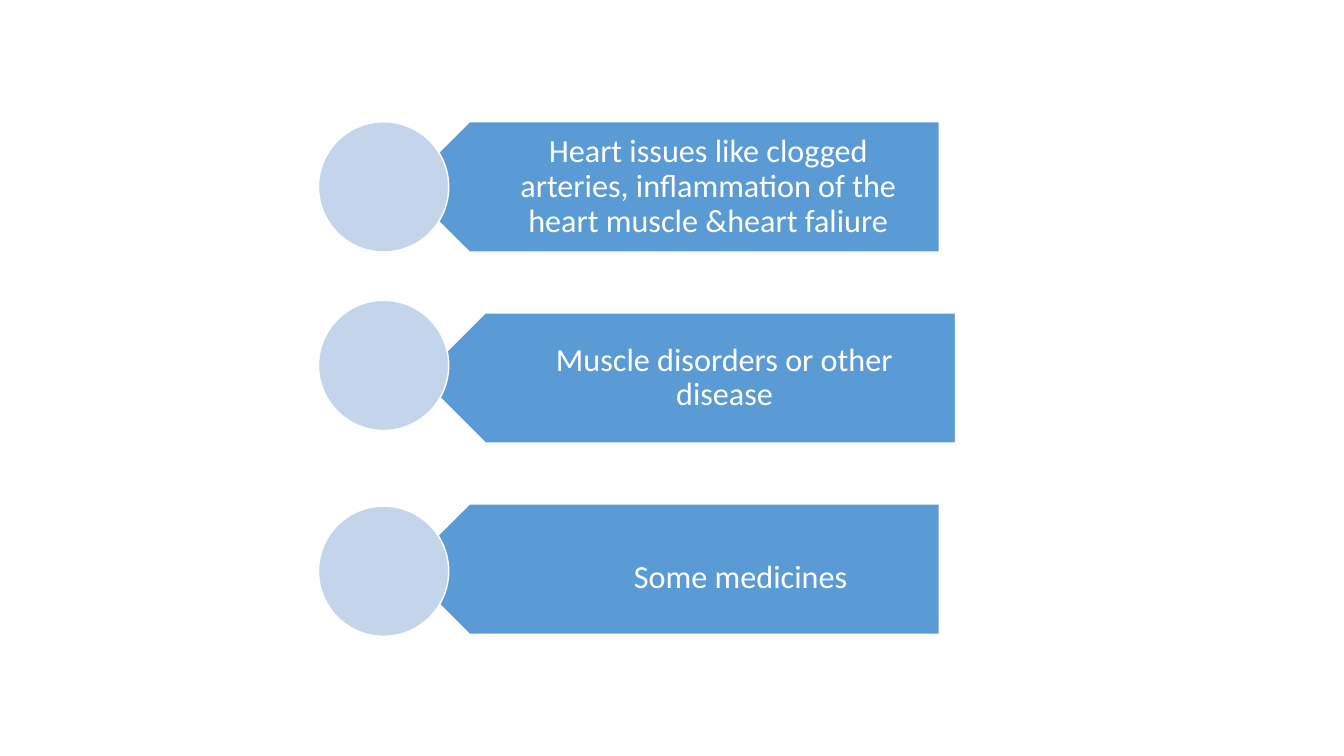
import pptx
import pptx.dml.color
import pptx.enum.shapes
import pptx.enum.text
import pptx.util

Pt = pptx.util.Pt
SHAPE = pptx.enum.shapes.MSO_SHAPE


def colour(code):
    return pptx.dml.color.RGBColor.from_string(code)


def apply_format(target, values):
    for name, value in values.items():
        setattr(target, name, value)


class CauseSlide:
    ARROW, DISC, WHITE = "5B9BD5", "C4D5EB", "FFFFFF"
    HEIGHT, ARROW_WIDTH, LABEL_WIDTH = 93, 382.3, 359.3
    FRAME = {
        "word_wrap": True,
        "vertical_anchor": pptx.enum.text.MSO_ANCHOR.MIDDLE,
        "margin_left": Pt(41),
        "margin_right": Pt(13),
        "margin_top": Pt(7),
        "margin_bottom": Pt(7),
    }
    PARAGRAPH = {
        "alignment": pptx.enum.text.PP_ALIGN.CENTER,
        "line_spacing": 0.9,
        "space_after": Pt(8),
    }
    FONT = {"name": "Calibri", "size": Pt(23)}

    def __init__(self, deck):
        self.page = deck.slides.add_slide(deck.slide_layouts[6])

    def shape(self, shapes, kind, left, top, width, fill):
        shape = shapes.add_shape(kind, Pt(left), Pt(top), Pt(width), Pt(self.HEIGHT))
        shape.shadow.inherit = False
        shape.fill.solid()
        shape.fill.fore_color.rgb = colour(fill)
        shape.line.color.rgb = colour(self.WHITE)
        shape.line.width = Pt(1)
        return shape

    def label(self, shapes, text, left, top):
        box = shapes.add_textbox(Pt(left), Pt(top), Pt(self.LABEL_WIDTH), Pt(self.HEIGHT))
        apply_format(box.text_frame, self.FRAME)
        para = box.text_frame.paragraphs[0]
        apply_format(para, self.PARAGRAPH)
        span = para.add_run()
        span.text = text
        apply_format(span.font, self.FONT)
        span.font.color.rgb = colour(self.WHITE)

    def arrow(self, text, arrow_at, label_at):
        """Add a left-pointing arrow grouped with its label."""
        group = self.page.shapes.add_group_shape()
        arrow = self.shape(group.shapes, SHAPE.PENTAGON, *arrow_at, self.ARROW_WIDTH, self.ARROW)
        arrow.rotation = 180
        self.label(group.shapes, text, *label_at)

    def disc(self, top):
        self.shape(self.page.shapes, SHAPE.OVAL, 227.5, top, self.HEIGHT, self.DISC)


def main():
    deck = pptx.Presentation()
    deck.slide_width, deck.slide_height = Pt(960), Pt(540)
    slide = CauseSlide(deck)
    causes = [
        ("Heart issues like clogged arteries, inflammation of the heart muscle &heart faliure",
         (288.7, 87), (312.5, 87), 87),
        ("Muscle disorders or other disease", (300.2, 223.5), (324, 223.5), 214.5),
        ("Some medicines", (288.7, 360), (335.5, 366.5), 361.5),
    ]
    for text, arrow_at, label_at, disc_top in causes:
        slide.arrow(text, arrow_at, label_at)
        slide.disc(disc_top)
    deck.save("out.pptx")


if __name__ == "__main__":
    main()
